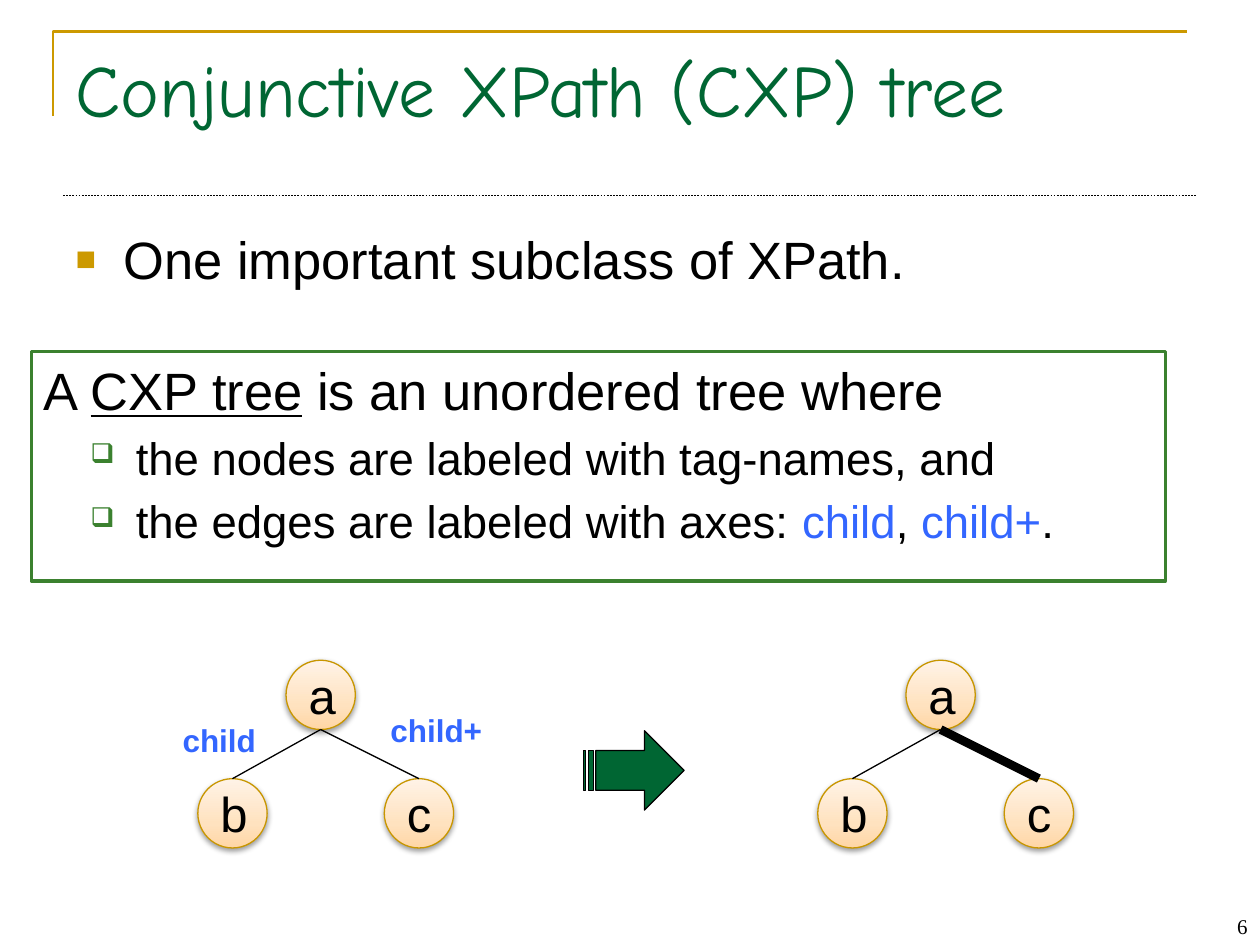
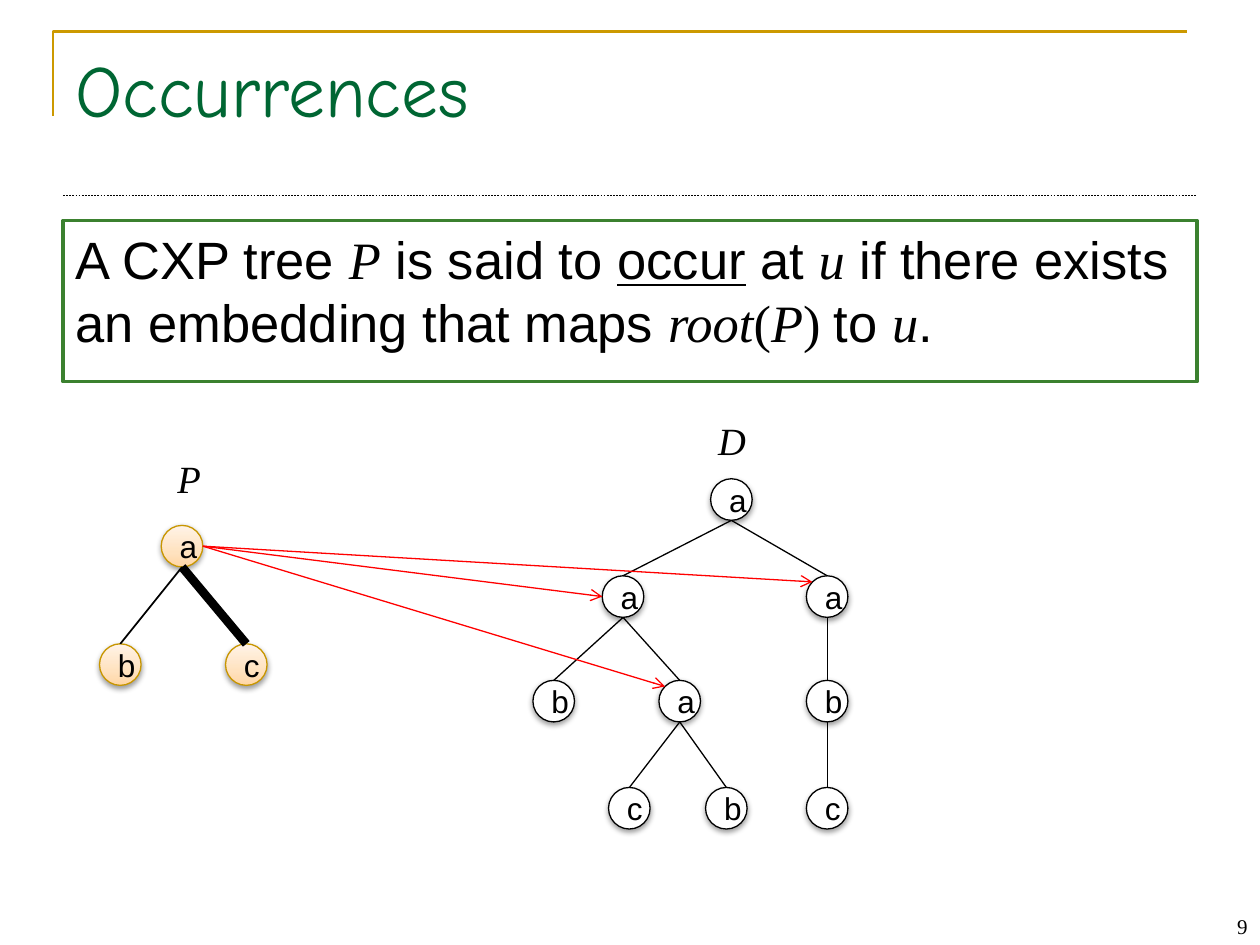
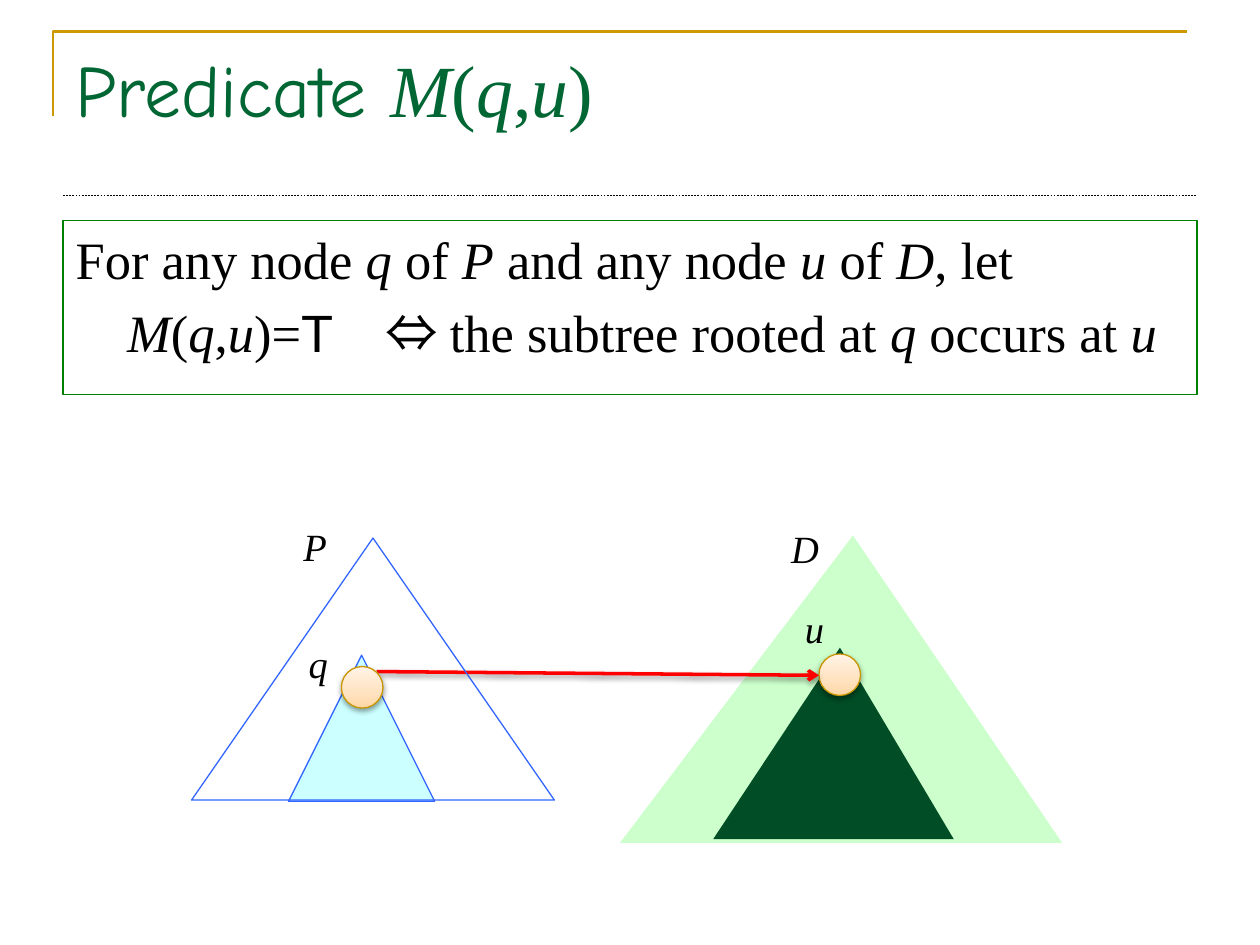
import pptx
import pptx.dml.color
import pptx.enum.dml
import pptx.enum.shapes
import pptx.enum.text
import pptx.oxml
import pptx.oxml.ns
import pptx.util

SCALE = 9144  # EMU in one px, 100 px to the inch
PAGE_SIZE = (1000, 750)


class Theme:
    gold, node_edge, green, frame_green = "CC9900", "C89600", "006633", "3B812F"
    box_green, pale_green, dark_green = "008000", "CCFFCC", "004D26"
    blue, pale_blue, red = "3366FF", "CCFFFF", "FF0000"
    black, white = "000000", "FFFFFF"
    node_stops = ((0, "FFD6A5"), (35, "FFE2BF"), (100, "FFF3E7"))
    display, sans, serif = "Comic Neue", "Arial", "Times New Roman"
    title, body, sub, node, label, small, number = 42, 30, 26, 28, 22, 18, 12
    thin, medium, thick = 0.75, 2, 5


# Run styles
VAR = dict(name=Theme.serif, italic=True)
ROMAN = dict(name=Theme.serif)
SANS = dict(name=Theme.sans)
TERM = dict(underline=True)
AXIS = dict(color=Theme.blue)

# Content: a paragraph holds runs, each a string or a (string, style) pair
BULLET = dict(gap=20, indent=(38, -38), bullet=("■", Theme.gold, 65))
SUB_BULLET = dict(gap=20, indent=(73, -36), bullet=("❑", Theme.frame_green, 60),
                  level=1, size=Theme.sub)

INTRO = [dict(BULLET, runs=["One important subclass of XPath."])]
CXP_DEFINITION = [
    dict(gap=20, runs=["A ", ("CXP tree", TERM), " is an unordered tree where"]),
    dict(SUB_BULLET, runs=["the nodes are labeled with tag-names, and"]),
    dict(SUB_BULLET, runs=["the edges are labeled with axes: ", ("child", AXIS), ", ",
                           ("child+", AXIS), "."]),
]
OCCURRENCE = [dict(gap=20, runs=[
    "A CXP tree ", ("P", VAR), " is said to ", ("occur", TERM), " at ", ("u", VAR),
    " if there exists an embedding that maps ", ("root", VAR), ("(", ROMAN),
    ("P", VAR), (") ", ROMAN), "to ", ("u", VAR), "."])]
PREDICATE_TITLE = ["Predicate ", ("M", VAR), ("(", ROMAN), ("q", VAR), (",", ROMAN),
                   ("u", VAR), (")", ROMAN)]
PREDICATE = [
    dict(gap=20, runs=["For any node ", ("q", VAR), " of ", ("P", VAR), " and any node ",
                       ("u", VAR), " of ", ("D", VAR), ", let"]),
    dict(gap=20, indent=(41, 0), runs=[
        ("M", VAR), "(", ("q", VAR), ",", ("u", VAR), ")=", ("T\u3000".replace("\u3000", "　"), SANS),
        "⇔ the subtree rooted at ", ("q", VAR), " occurs at ", ("u", VAR)]),
]

# Trees: node name -> (left, top); a name's first letter is its label
CXP_NODES = {"a": (227, 524), "b": (157, 618), "c": (305, 618)}
CXP_EDGE_LABELS = [("child", (135, 567, 79, 40)), ("child+", (300, 559, 94, 40))]
CXP_COPY_SHIFT = 492
PATTERN_NODES = {"a": (128, 417), "b": (79, 511), "c": (179, 511)}
PATTERN_EDGES = [("a", "b", 1), ("a", "c", Theme.thick)]
DATA_NODES = {
    "a root": (564, 380), "a left": (478, 457), "a right": (640, 457),
    "b left": (423, 540), "a inner": (523, 540), "b right": (640, 540),
    "c inner": (483, 625), "b inner": (560, 625), "c right": (640, 625),
}
DATA_EDGES = [(parent, child, Theme.thin) for parent, child in (
    ("a root", "a left"), ("a root", "a right"), ("a left", "b left"),
    ("a left", "a inner"), ("a inner", "c inner"), ("a inner", "b inner"),
    ("a right", "b right"), ("b right", "c right"))]
OCCURRENCE_LABELS = [("P", (131, 356, 49, 47)), ("D", (560, 326, 52, 47))]
PREDICATE_LABELS = [("P", (231, 410, 49, 47)), ("D", (618, 412, 52, 47)),
                    ("q", (235, 503, 45, 47)), ("u", (629, 475, 45, 47))]
LARGE_NODE, SMALL_NODE = 55, 33

SHAPE = pptx.enum.shapes.MSO_SHAPE
ALIGN = pptx.enum.text.PP_ALIGN
ANCHOR = pptx.enum.text.MSO_ANCHOR
AUTO_SIZE = pptx.enum.text.MSO_AUTO_SIZE


# Basic tools
def px(*lengths):
    return [pptx.util.Emu(round(length * SCALE)) for length in lengths]


def rgb(color):
    return pptx.dml.color.RGBColor.from_string(color)


def add_xml(parent, tag, inner="", **attributes):
    values = "".join(f' {key}="{value}"' for key, value in attributes.items())
    xml = f'<a:{tag} {pptx.oxml.ns.nsdecls("a")}{values}>{inner}</a:{tag}>'
    element = pptx.oxml.parse_xml(xml)
    parent.append(element)
    return element


def find_part(shape, tag):
    return shape._element.spPr.find(pptx.oxml.ns.qn(tag))


# Text
def set_font(font, name=None, size=None, color=None, **flags):
    if name:
        font.name = name
    if size:
        font.size = pptx.util.Pt(size)
    if color:
        font.color.rgb = rgb(color)
    for flag, value in flags.items():
        setattr(font, flag, value)


def set_layout(para, indent=(0, 0), gap=0, bullet=None, level=0):
    para.level = level
    properties = para._p.get_or_add_pPr()
    left, first = px(*indent)
    properties.set("marL", str(left))
    properties.set("indent", str(first))
    add_xml(properties, "spcBef", f'<a:spcPct val="{gap * 1000}"/>')
    if bullet:
        mark, color, percent = bullet
        add_xml(properties, "buClr", f'<a:srgbClr val="{color}"/>')
        add_xml(properties, "buSzPct", val=percent * 1000)
        add_xml(properties, "buChar", char=mark)
    else:
        add_xml(properties, "buNone")


def write(frame, paragraphs, size, name=Theme.sans, color=Theme.black,
          align=ALIGN.LEFT, anchor=ANCHOR.TOP, **flags):
    frame.vertical_anchor = anchor
    for index, content in enumerate(paragraphs):
        layout = dict(content)
        runs = layout.pop("runs")
        para_size = layout.pop("size", size)
        para = frame.add_paragraph() if index else frame.paragraphs[0]
        para.alignment = align
        set_layout(para, **layout)
        set_font(para.font, name, para_size, color, **flags)
        for run in runs:
            words, style = (run, {}) if isinstance(run, str) else run
            span = para.add_run()
            span.text = words
            set_font(span.font, **style)


def add_label(shapes, words, area, size=Theme.label, **style):
    box = shapes.add_textbox(*px(*area))
    box.text_frame.word_wrap = False
    box.text_frame.auto_size = AUTO_SIZE.SHAPE_TO_FIT_TEXT
    write(box.text_frame, [dict(runs=[words])], size, **style)


# Shapes and lines
def set_line(shape, color, width=Theme.thin):
    if color:
        shape.line.color.rgb = rgb(color)
        shape.line.width = pptx.util.Pt(width)
    else:
        shape.line.fill.background()


def add_shadow(effects):
    add_xml(effects, "outerShdw", '<a:srgbClr val="000000"><a:alpha val="38000"/></a:srgbClr>',
            blurRad=40000, dist=20000, dir=5400000, rotWithShape=0)


def add_figure(shapes, kind, area, fill=None, line=None, width=Theme.thin):
    shape = shapes.add_shape(kind, *px(*area))
    shape.shadow.inherit = False
    if fill:
        shape.fill.solid()
        shape.fill.fore_color.rgb = rgb(fill)
    else:
        shape.fill.background()
    set_line(shape, line, width)
    return shape


def add_triangle(shapes, area, fill=None, line=None, apex=0.5):
    add_figure(shapes, SHAPE.ISOSCELES_TRIANGLE, area, fill, line).adjustments[0] = apex


def add_node(shapes, corner, side, letter=None, size=Theme.small, tinted=True):
    edge = Theme.node_edge if tinted else Theme.black
    node = add_figure(shapes, SHAPE.OVAL, (*corner, side, side), Theme.white, edge)
    if tinted:
        stops = "".join(f'<a:gs pos="{place * 1000}"><a:srgbClr val="{color}"/></a:gs>'
                        for place, color in Theme.node_stops)
        properties = node._element.spPr
        gradient = add_xml(properties, "gradFill",
                           f'<a:gsLst>{stops}</a:gsLst><a:lin ang="16200000" scaled="0"/>',
                           rotWithShape=1)
        properties.replace(find_part(node, "a:solidFill"), gradient)
    add_shadow(find_part(node, "a:effectLst"))
    if letter:
        write(node.text_frame, [dict(runs=[letter])], size,
              align=ALIGN.CENTER, anchor=ANCHOR.MIDDLE)
    return node


def add_line(shapes, start, end, color=Theme.black, width=Theme.thin,
             arrow=False, shadow=False):
    line = shapes.add_connector(pptx.enum.shapes.MSO_CONNECTOR.STRAIGHT, *px(*start, *end))
    set_line(line, color, width)
    if arrow:
        add_xml(find_part(line, "a:ln"), "tailEnd", type="arrow")
    effects = add_xml(line._element.spPr, "effectLst")
    if shadow:
        add_shadow(effects)
    return line


def add_tree(shapes, nodes, edges, side, size=Theme.small, tinted=True, shift=0):
    places = {name: (left + shift, top) for name, (left, top) in nodes.items()}
    drawn = {name: add_node(shapes, corner, side, name[0], size, tinted)
             for name, corner in places.items()}
    for parent, child, width in edges:
        (left, top), (child_left, child_top) = places[parent], places[child]
        line = add_line(shapes, (left + side / 2, top + side),
                        (child_left + side / 2, child_top), width=width)
        line.end_connect(drawn[child], 0)


# What every slide shares
def add_page(deck, title, body, body_height, body_font=Theme.sans, number=None):
    page = deck.slides.add_slide(deck.slide_layouts[1])
    corner = page.shapes.build_freeform(42, 92, scale=float(SCALE))
    corner.add_line_segments([(42, 25), (942, 25)], close=False)
    bracket = corner.convert_to_shape()
    bracket.shadow.inherit = False
    bracket.fill.background()
    set_line(bracket, Theme.gold, 1.5)
    rule = add_line(page.shapes, (50, 155), (949, 155), width=0.25)
    rule.line.dash_style = pptx.enum.dml.MSO_LINE.DASH

    heading, content = page.shapes.title, page.placeholders[1]
    for holder, area in ((heading, (50, 30, 900, 125)), (content, (50, 175, 900, body_height))):
        holder.left, holder.top, holder.width, holder.height = px(*area)
        holder.text_frame.auto_size = AUTO_SIZE.NONE
    content.text_frame.margin_right = px(4)[0]
    write(heading.text_frame, [dict(runs=title)], Theme.title, Theme.display, Theme.green)
    write(content.text_frame, body, Theme.body, body_font)
    if number:
        add_label(page.shapes, number, (947, 720, 53, 30), Theme.number,
                  name=Theme.serif, align=ALIGN.RIGHT, anchor=ANCHOR.BOTTOM)
    return page, content


# Slides
def add_cxp_page(deck):
    page, _ = add_page(deck, ["Conjunctive XPath (CXP) tree"], INTRO, 116, number="6")
    for shift, c_width in ((0, Theme.thin), (CXP_COPY_SHIFT, Theme.thick)):
        group = page.shapes.add_group_shape().shapes
        edges = [("a", "b", Theme.thin), ("a", "c", c_width)]
        add_tree(group, CXP_NODES, edges, LARGE_NODE, Theme.node, shift=shift)
        if not shift:
            for words, area in CXP_EDGE_LABELS:
                add_label(group, words, area, Theme.small, color=Theme.blue, bold=True)
    add_figure(page.shapes, SHAPE.STRIPED_RIGHT_ARROW, (463, 580, 80, 63),
               Theme.green, Theme.black)
    definition = add_figure(page.shapes, SHAPE.RECTANGLE, (25, 279, 900, 182),
                            Theme.white, Theme.frame_green, Theme.medium)
    write(definition.text_frame, CXP_DEFINITION, Theme.body)


def add_occurrences_page(deck):
    page, content = add_page(deck, ["Occurrences"], OCCURRENCE, 128, number="9")
    set_line(content, Theme.frame_green, Theme.medium)
    add_tree(page.shapes, PATTERN_NODES, PATTERN_EDGES, SMALL_NODE)
    add_tree(page.shapes, DATA_NODES, DATA_EDGES, SMALL_NODE, tinted=False)

    # Arrows from the pattern root to the left or the upper left of each match
    radius = SMALL_NODE / 2
    left, top = PATTERN_NODES["a"]
    start = (left + SMALL_NODE, top + radius)
    diagonal = radius * (1 - 0.5 ** 0.5)
    for name, (right, down) in (("a right", (diagonal, diagonal)), ("a left", (0, radius)),
                                ("a inner", (diagonal, diagonal))):
        left, top = DATA_NODES[name]
        add_line(page.shapes, start, (left + right, top + down), Theme.red, arrow=True)
    for words, area in OCCURRENCE_LABELS:
        add_label(page.shapes, words, area, **VAR)


def add_predicate_page(deck):
    page, content = add_page(deck, PREDICATE_TITLE, PREDICATE, 138, Theme.serif)
    set_line(content, Theme.box_green)
    shapes = page.shapes
    add_triangle(shapes, (492, 425, 351, 244), Theme.pale_green, apex=0.527)
    add_triangle(shapes, (566, 514, 191, 152), Theme.dark_green, apex=0.527)
    add_node(shapes, (650, 519), SMALL_NODE)
    add_line(shapes, (299, 533), (650, 536), Theme.red, Theme.medium, arrow=True, shadow=True)
    add_triangle(shapes, (229, 520, 116, 116), Theme.pale_blue, Theme.blue)
    add_node(shapes, (271, 529), SMALL_NODE)
    add_triangle(shapes, (152, 427, 288, 208), line=Theme.blue)
    for words, area in PREDICATE_LABELS:
        add_label(shapes, words, area, **VAR)


def main():
    deck = pptx.Presentation()
    deck.slide_width, deck.slide_height = px(*PAGE_SIZE)
    add_cxp_page(deck)
    add_occurrences_page(deck)
    add_predicate_page(deck)
    deck.save("out.pptx")


if __name__ == "__main__":
    main()
